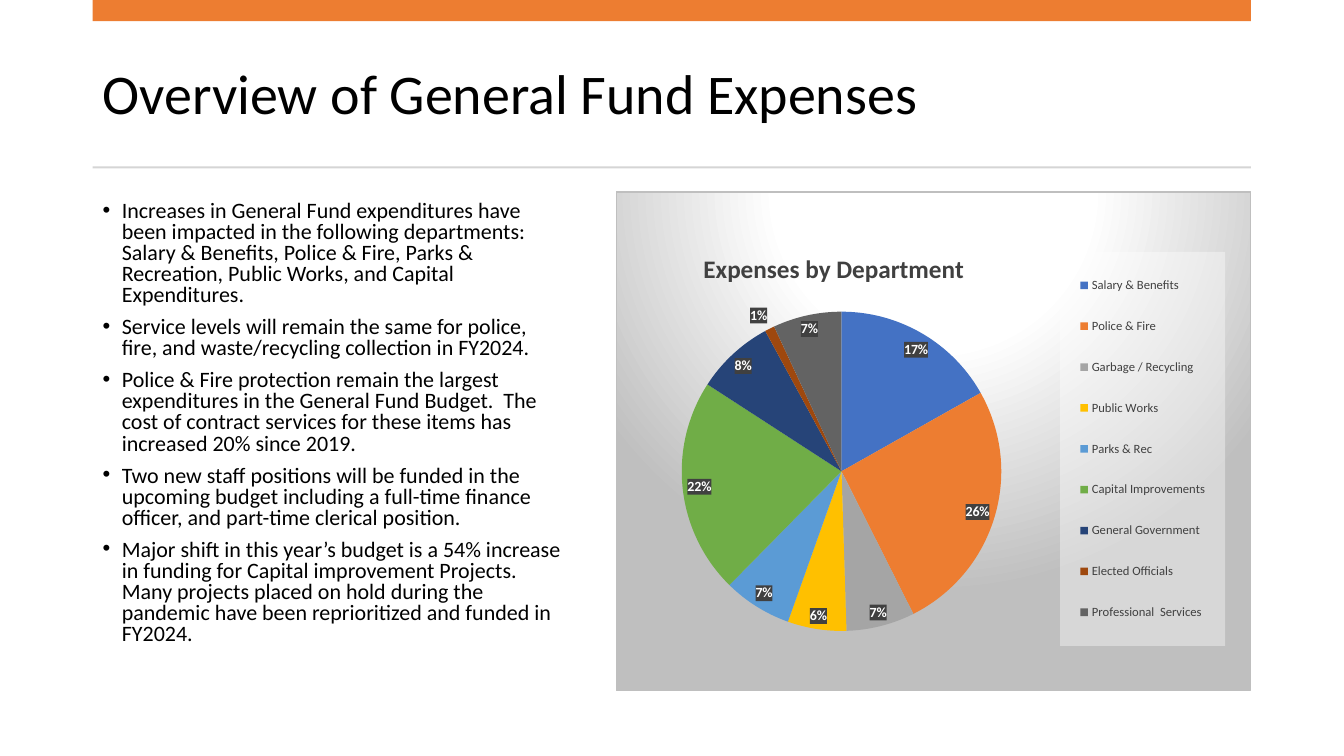
from lxml import etree
from pptx import Presentation
from pptx.chart.data import CategoryChartData
from pptx.dml.color import RGBColor
from pptx.enum.chart import XL_CHART_TYPE as ChartType
from pptx.enum.chart import XL_LABEL_POSITION as LabelPos
from pptx.enum.chart import XL_LEGEND_POSITION as LegendPos
from pptx.enum.shapes import MSO_SHAPE as Preset
from pptx.enum.text import MSO_ANCHOR as Anchor
from pptx.oxml import parse_xml
from pptx.oxml.ns import qn
from pptx.util import Inches, Pt

SLIDE_W, SLIDE_H = Inches(13.33), Inches(7.5)
LEFT, SPAN = 6.9, 86.18  # margin and content width, percent of the slide
NS = ('xmlns:a="http://schemas.openxmlformats.org/drawingml/2006/main" '
      'xmlns:c="http://schemas.openxmlformats.org/drawingml/2006/chart"')

HEADING = "Overview of General Fund Expenses"
POINTS = [
    "Increases in General Fund expenditures have been impacted in the following "
    "departments: Salary & Benefits, Police & Fire, Parks & Recreation, "
    "Public Works, and Capital Expenditures.",
    "Service levels will remain the same for police, fire, and waste/recycling "
    "collection in FY2024.",
    "Police & Fire protection remain the largest expenditures in the General Fund "
    "Budget.  The cost of contract services for these items has increased 20% "
    "since 2019.",
    "Two new staff positions will be funded in the upcoming budget including a "
    "full-time finance officer, and part-time clerical position.",
    "Major shift in this year’s budget is a 54% increase in funding for Capital "
    "improvement Projects.  Many projects placed on hold during the pandemic have "
    "been reprioritized and funded in FY2024.",
]
EXPENSES = [  # department, share, slice colour
    ("Salary & Benefits", 17, "4472C4"),
    ("Police & Fire", 26, "ED7D31"),
    ("Garbage / Recycling", 7, "A5A5A5"),
    ("Public Works", 6, "FFC000"),
    ("Parks & Rec", 7, "5B9BD5"),
    ("Capital Improvements", 22, "70AD47"),
    ("General Government", 8, "264478"),
    ("Elected Officials", 1, "9E480E"),
    ("Professional  Services", 7, "636363"),
]


def color(value):
    return RGBColor.from_string(value)


def area(left, top, width, height):
    """Turn percentages of the slide into lengths."""
    return [int(share * side / 100) for share, side in
            zip((left, top, width, height), (SLIDE_W, SLIDE_H) * 2)]


def style_font(font, size, ink, bold=False):
    for name, value in dict(name="Calibri", size=Pt(size), bold=bold).items():
        setattr(font, name, value)
    font.color.rgb = color(ink)


def add_bar(slide, place, fill):
    bar = slide.shapes.add_shape(Preset.RECTANGLE, *area(*place))
    bar.shadow.inherit = False
    bar.fill.solid()
    bar.fill.fore_color.rgb = color(fill)
    bar.line.fill.background()


def add_bullet(paragraph):
    props = paragraph._p.get_or_add_pPr()
    indent = Inches(0.19)
    props.set("marL", str(indent))
    props.set("indent", str(-indent))
    etree.SubElement(props, qn("a:buFont")).set("typeface", "Arial")
    etree.SubElement(props, qn("a:buChar")).set("char", "•")


def add_text(slide, place, lines, size, spacing, anchor, gap=0, bullets=False):
    frame = slide.shapes.add_textbox(*area(*place)).text_frame
    frame.word_wrap = True
    frame.vertical_anchor = anchor
    for i, line in enumerate(lines):
        paragraph = frame.paragraphs[0] if i == 0 else frame.add_paragraph()
        paragraph.text = line
        if bullets:
            add_bullet(paragraph)
        paragraph.line_spacing = spacing
        paragraph.space_before = Pt(gap if i else 0)
        style_font(paragraph.font, size, "000000")


def layout(x, y, w=None, h=None, inner=False):
    """Manual layout of a chart part, in shares of the chart."""
    target = '<c:layoutTarget val="inner"/>' if inner else ""
    modes = '<c:xMode val="edge"/><c:yMode val="edge"/>'
    sides = "".join(f'<c:{tag} val="{share}"/>' for tag, share in
                    zip("xywh", (x, y, w, h)) if share is not None)
    return parse_xml(f"<c:layout {NS}><c:manualLayout>{target}{modes}{sides}"
                     "</c:manualLayout></c:layout>")


def solid_panel(fill, alpha):
    return parse_xml(f'<c:spPr {NS}><a:solidFill><a:srgbClr val="{fill}">'
                     f'<a:alpha val="{alpha * 1000}"/></a:srgbClr></a:solidFill>'
                     "<a:ln><a:noFill/></a:ln></c:spPr>")


def glow_panel():
    stops = "".join(f'<a:gs pos="{pos * 1000}"><a:srgbClr val="{fill}"/></a:gs>'
                    for pos, fill in ((0, "FFFFFF"), (39, "FFFFFF"), (100, "BFBFBF")))
    return parse_xml(
        f"<c:spPr {NS}><a:gradFill><a:gsLst>{stops}</a:gsLst><a:path path=\"circle\">"
        '<a:fillToRect l="50000" t="-80000" r="50000" b="180000"/></a:path></a:gradFill>'
        '<a:ln w="9525"><a:solidFill><a:srgbClr val="BFBFBF"/></a:solidFill></a:ln>'
        "</c:spPr>")


def drop_layout(part):
    for old in part.findall(qn("c:layout")):
        part.remove(old)


def add_pie(slide, place):
    departments, shares, fills = zip(*EXPENSES)
    data = CategoryChartData()
    data.categories = departments
    data.add_series("Series 1", shares)
    chart = slide.shapes.add_chart(ChartType.PIE, *area(*place), data).chart
    style_font(chart.font, 10, "000000")
    chart._chartSpace.find(qn("c:chart")).addnext(glow_panel())

    # Slices
    pie = chart.plots[0]
    pie.vary_by_categories = True
    for i, fill in enumerate(fills):
        wedge = pie.series[0].points[i].format.fill
        wedge.solid()
        wedge.fore_color.rgb = color(fill)
    plot_area = chart._chartSpace.find(".//" + qn("c:plotArea"))
    drop_layout(plot_area)
    plot_area.insert(0, layout(0.09, 0.24, 0.53, 0.64, inner=True))

    # Percent labels on dark boxes
    labels = pie.series[0].data_labels
    style_font(labels.font, 10, "FFFFFF", bold=True)
    for name, value in dict(show_percentage=True, show_value=False,
                            number_format="0%", number_format_is_linked=False,
                            position=LabelPos.BEST_FIT).items():
        setattr(labels, name, value)
    labels._element.find(qn("c:numFmt")).addnext(solid_panel("404040", 90))

    # Title
    chart.has_title = True
    title = chart.chart_title
    title.text_frame.text = "Expenses by Department"
    style_font(title.text_frame.paragraphs[0].runs[0].font, 18, "404040", bold=True)
    drop_layout(title._element)
    title._element.find(qn("c:tx")).addnext(layout(0.13, 0.11))

    # Legend on a pale panel
    chart.has_legend = True
    legend = chart.legend
    legend.position = LegendPos.RIGHT
    legend.include_in_layout = False
    style_font(legend.font, 9, "404040")
    drop_layout(legend._element)
    legend._element.find(qn("c:legendPos")).addnext(layout(0.7, 0.12, 0.26, 0.79))
    legend._element.find(qn("c:overlay")).addnext(solid_panel("FFFFFF", 39))


def main():
    deck = Presentation()
    deck.slide_width, deck.slide_height = SLIDE_W, SLIDE_H
    slide = deck.slides.add_slide(deck.slide_layouts[6])

    # Heading between the top band and the rule
    add_text(slide, (LEFT, 4.93, SPAN, 15.73), [HEADING], 40, 0.9, Anchor.MIDDLE)
    add_bar(slide, (LEFT, 0, SPAN, 2.8), "ED7D31")
    add_bar(slide, (LEFT, 22, SPAN, 0.27), "D5D5D5")

    # Findings on the left, chart on the right
    add_text(slide, (LEFT, 26, 35.7, 65.47), POINTS, 15.7, 0.8, Anchor.TOP,
             gap=7.7, bullets=True)
    add_pie(slide, (45.83, 25.33, 47.25, 66.13))
    deck.save("out.pptx")


if __name__ == "__main__":
    main()
